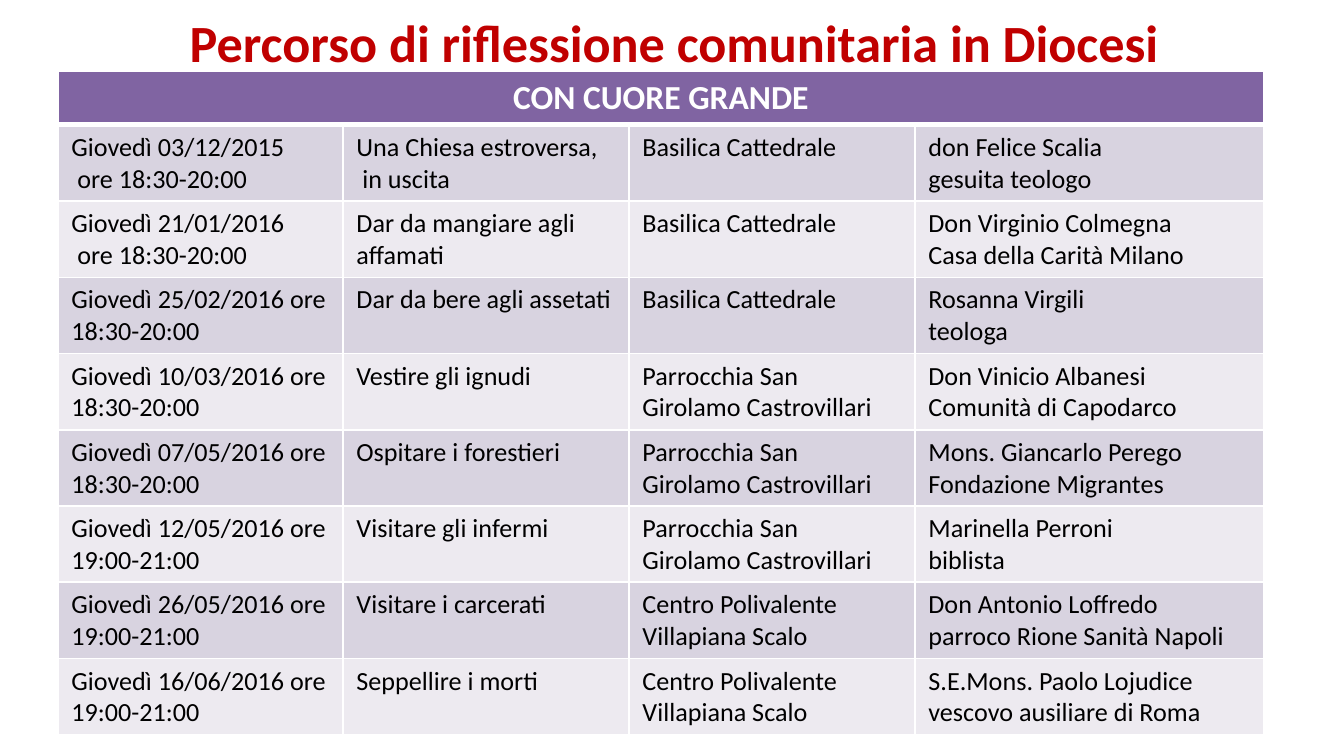
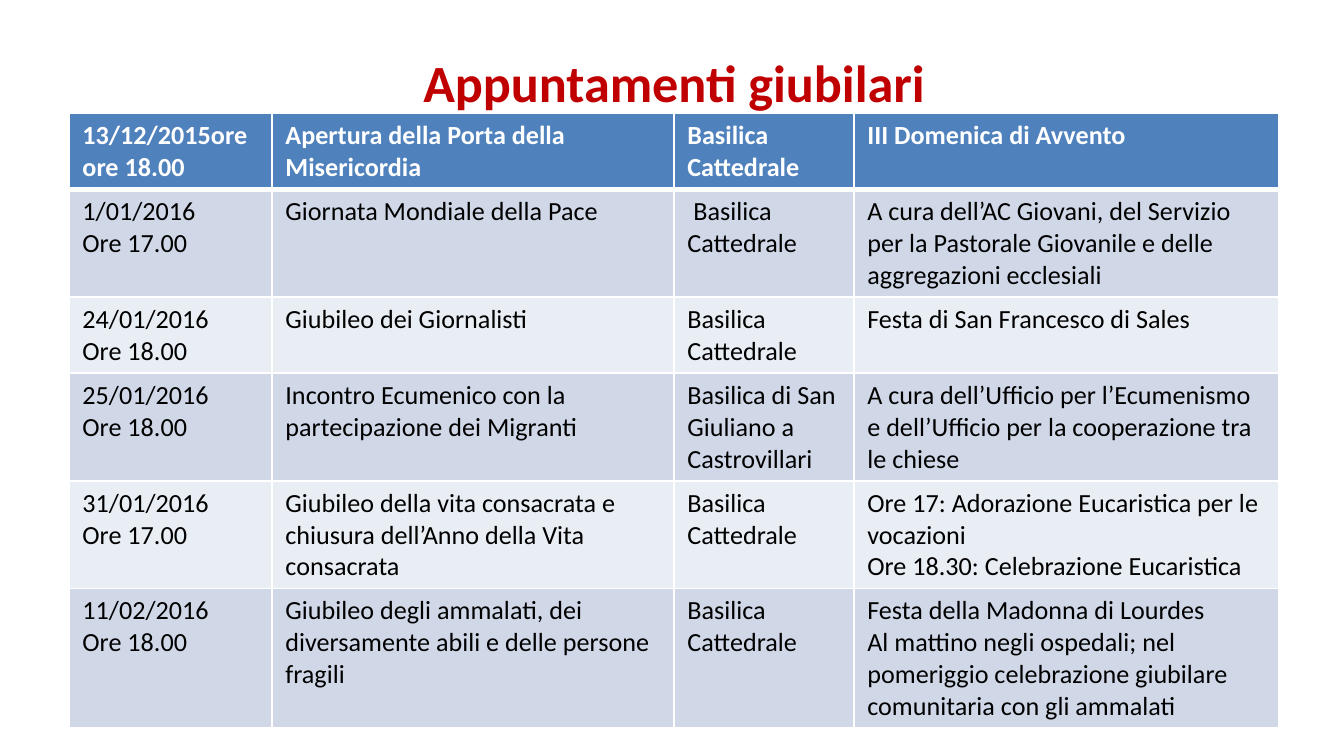
from lxml import etree
from pptx import Presentation
from pptx.dml.color import RGBColor
from pptx.enum import text
from pptx.oxml import ns
from pptx.util import Emu, Pt

PX = 914400 / 134.4
FONT = "Calibri"
RED, WHITE, BLACK = "C00000", "FFFFFF", "000000"
PURPLES = ("8064A2", "D8D3E0", "EDEAF0")
BLUES = ("4F81BD", "D0D8E8", "E9EDF4")
LEFT, MIDDLE = text.PP_ALIGN.LEFT, text.MSO_ANCHOR.MIDDLE
CENTER, TOP = text.PP_ALIGN.CENTER, text.MSO_ANCHOR.TOP

CATHEDRAL = "Basilica Cattedrale"
PARISH = "Parrocchia San Girolamo Castrovillari"
CENTRE = "Centro Polivalente Villapiana Scalo"

MEETINGS = [
    ("CON CUORE GRANDE",),
    ("Giovedì 03/12/2015\n ore 18:30-20:00", "Una Chiesa estroversa,\n in uscita",
     CATHEDRAL, "don Felice Scalia\ngesuita teologo"),
    ("Giovedì 21/01/2016\n ore 18:30-20:00", "Dar da mangiare agli affamati",
     CATHEDRAL, "Don Virginio Colmegna\nCasa della Carità Milano"),
    ("Giovedì 25/02/2016 ore 18:30-20:00", "Dar da bere agli assetati",
     CATHEDRAL, "Rosanna Virgili\nteologa"),
    ("Giovedì 10/03/2016 ore 18:30-20:00", "Vestire gli ignudi",
     PARISH, "Don Vinicio Albanesi\nComunità di Capodarco"),
    ("Giovedì 07/05/2016 ore 18:30-20:00", "Ospitare i forestieri",
     PARISH, "Mons. Giancarlo Perego\nFondazione Migrantes"),
    ("Giovedì 12/05/2016 ore 19:00-21:00", "Visitare gli infermi",
     PARISH, "Marinella Perroni\nbiblista"),
    ("Giovedì 26/05/2016 ore 19:00-21:00", "Visitare i carcerati",
     CENTRE, "Don Antonio Loffredo\nparroco Rione Sanità Napoli"),
    ("Giovedì 16/06/2016 ore 19:00-21:00", "Seppellire i morti",
     CENTRE, "S.E.Mons. Paolo Lojudice vescovo ausiliare di Roma"),
]

JUBILEES = [
    ("13/12/2015ore ore 18.00", "Apertura della Porta della Misericordia",
     CATHEDRAL, "III Domenica di Avvento"),
    ("1/01/2016\nOre 17.00", "Giornata Mondiale della Pace", " " + CATHEDRAL,
     "A cura dell’AC Giovani, del Servizio per la Pastorale Giovanile e delle "
     "aggregazioni ecclesiali"),
    ("24/01/2016\nOre 18.00", "Giubileo dei Giornalisti", CATHEDRAL,
     "Festa di San Francesco di Sales"),
    ("25/01/2016\nOre 18.00", "Incontro Ecumenico con la partecipazione dei Migranti",
     "Basilica di San Giuliano a Castrovillari",
     "A cura dell’Ufficio per l’Ecumenismo e dell’Ufficio per la cooperazione tra le chiese"),
    ("31/01/2016\nOre 17.00",
     "Giubileo della vita consacrata e chiusura dell’Anno della Vita consacrata", CATHEDRAL,
     "Ore 17: Adorazione Eucaristica per le vocazioni\nOre 18.30: Celebrazione Eucaristica"),
    ("11/02/2016\nOre 18.00",
     "Giubileo degli ammalati, dei diversamente abili e delle persone fragili", CATHEDRAL,
     "Festa della Madonna di Lourdes\nAl mattino negli ospedali; nel pomeriggio "
     "celebrazione giubilare comunitaria con gli ammalati"),
]


def px(n):
    return Emu(round(n * PX))


def rgb(color):
    return RGBColor.from_string(color)


def write(tf, words, size, color, bold, align):
    tf.text = words
    for p in tf.paragraphs:
        p.alignment = align
        p.font.name, p.font.size, p.font.bold = FONT, Pt(size), bold
        p.font.color.rgb = rgb(color)


def add_title(slide, box, words, anchor):
    tf = slide.shapes.add_textbox(*map(px, box)).text_frame
    tf.word_wrap = True
    tf.vertical_anchor = anchor
    write(tf, words, 28, RED, True, CENTER)


def add_borders(cell, top, bottom):
    tcPr = cell._tc.get_or_add_tcPr()
    for side, width in (("L", 1), ("R", 1), ("T", top), ("B", bottom)):
        ln = etree.SubElement(tcPr, ns.qn(f"a:ln{side}"), w=str(Pt(width)))
        fill = etree.SubElement(ln, ns.qn("a:solidFill"))
        etree.SubElement(fill, ns.qn("a:srgbClr"), val=WHITE)


def add_schedule(slide, box, rows, widths, heights, colors, head_size, head_align):
    frame = slide.shapes.add_table(len(rows), len(widths), *map(px, box))
    table = frame.table
    table.first_row = table.horz_banding = False
    for column, width in zip(table.columns, widths):
        column.width = px(width)
    head_color, *bands = colors
    for i, words in enumerate(rows):
        head = i == 0
        table.rows[i].height = px(heights[0] if head else heights[1])
        if len(words) == 1:
            table.cell(i, 0).merge(table.cell(i, len(widths) - 1))
        for j in range(len(widths)):
            cell = table.cell(i, j)
            add_borders(cell, 3 if i == 1 else 1, 3 if head else 1)
            cell.fill.solid()
            cell.fill.fore_color.rgb = rgb(head_color if head else bands[(i - 1) % 2])
            if j < len(words):
                write(cell.text_frame, words[j], head_size if head else 14,
                      WHITE if head else BLACK, head, head_align if head else LEFT)
    frame.height = px(box[3])


def main():
    prs = Presentation()
    prs.slide_width, prs.slide_height = px(1344), px(756)
    blank = prs.slide_layouts[6]

    s = prs.slides.add_slide(blank)
    add_title(s, (69, 4, 1210, 520), "Percorso di riflessione comunitaria in Diocesi", TOP)
    add_schedule(s, (58, 71, 1206, 663), MEETINGS, (285, 286, 286, 349), (43, 73),
                 PURPLES, 18, CENTER)

    s = prs.slides.add_slide(blank)
    add_title(s, (69, 19, 1210, 126), "Appuntamenti giubilari", MIDDLE)
    add_schedule(s, (69, 113, 1210, 614), JUBILEES, (203, 402, 180, 425), (55, 55),
                 BLUES, 14, LEFT)

    prs.save("out.pptx")


if __name__ == "__main__":
    main()
